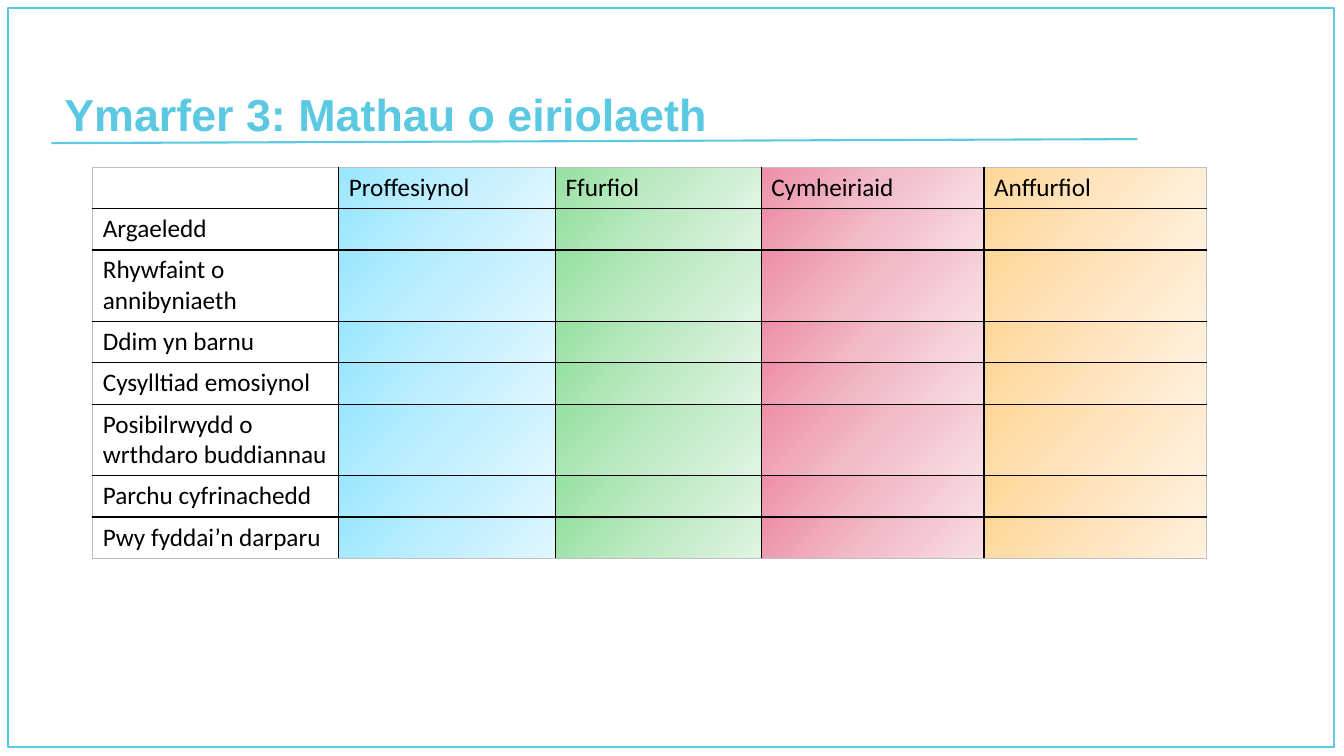
from lxml import etree
from pptx import Presentation
from pptx.dml.color import RGBColor
from pptx.enum.shapes import MSO_CONNECTOR, MSO_SHAPE
from pptx.enum.text import MSO_ANCHOR
from pptx.oxml.ns import qn
from pptx.util import Inches, Pt

TITLE = "Ymarfer 3: Mathau o eiriolaeth"
# heading, column width, gradient stops
COLUMNS = [
    ("", 2.44, None),
    ("Proffesiynol", 2.15, ("9AE7FF", "C0EFFF", "E0F6FE")),
    ("Ffurfiol", 2.04, ("95E0A0", "BFEAC5", "E0F4E3")),
    ("Cymheiriaid", 2.21, ("ED8EA7", "F2BBC8", "F8DEE4")),
    ("Anffurfiol", 2.21, ("FFD696", "FFE4BE", "FFF1DF")),
]
# label, row height
ROWS = [
    ("Argaeledd", 0.41),
    ("Rhywfaint o annibyniaeth", 0.71),
    ("Ddim yn barnu", 0.41),
    ("Cysylltiad emosiynol", 0.41),
    ("Posibilrwydd o wrthdaro buddiannau", 0.71),
    ("Parchu cyfrinachedd", 0.41),
    ("Pwy fyddai’n darparu", 0.41),
]
HEADER_HEIGHT = 0.41
ACCENT = RGBColor(0x5C, 0xC9, 0xE3)
BLACK = RGBColor(0, 0, 0)
OUTER = RGBColor(0xBF, 0xBF, 0xBF)


def add_color(parent, color):
    fill = etree.SubElement(parent, qn("a:solidFill"))
    etree.SubElement(fill, qn("a:srgbClr"), val=str(color))


def set_border(cell, side, color):
    ln = etree.SubElement(cell._tc.get_or_add_tcPr(), qn(f"a:ln{side}"), w=str(Pt(1)))
    add_color(ln, color)


def set_gradient(cell, stops):
    """Fill the cell with evenly spaced stops, running at 45 degrees."""
    grad = etree.SubElement(cell._tc.get_or_add_tcPr(), qn("a:gradFill"))
    gs_list = etree.SubElement(grad, qn("a:gsLst"))
    for i, color in enumerate(stops):
        gs = etree.SubElement(gs_list, qn("a:gs"), pos=str(i * 50000))
        etree.SubElement(gs, qn("a:srgbClr"), val=color)
    etree.SubElement(grad, qn("a:lin"), ang="2700000", scaled="0")


def format_cell(cell, text, stops, edges):
    for side, is_outer in edges.items():
        set_border(cell, side, OUTER if is_outer else BLACK)
    if stops:
        set_gradient(cell, stops)
    else:
        cell.fill.background()
    p = cell.text_frame.paragraphs[0]
    p.text = text
    for font in [p.font] + [r.font for r in p.runs]:
        font.name, font.size, font.bold = "Calibri", Pt(18), False
        font.color.rgb = BLACK


def add_frame(s):
    line = s.shapes.add_connector(MSO_CONNECTOR.STRAIGHT, Inches(0.51), Inches(1.42),
                                  Inches(11.28), Inches(1.38))
    line.line.color.rgb, line.line.width = ACCENT, Pt(1.5)
    etree.SubElement(line._element.spPr, qn("a:effectLst"))
    frame = s.shapes.add_shape(MSO_SHAPE.RECTANGLE, Inches(0.08), Inches(0.08),
                               Inches(13.15), Inches(7.33))
    frame.shadow.inherit = False
    frame.fill.background()
    frame.line.color.rgb, frame.line.width = ACCENT, Pt(1)


def add_title(s):
    tf = s.shapes.add_textbox(Inches(0.54), 0, Inches(11.5), Inches(1.45)).text_frame
    tf.word_wrap = True
    tf.vertical_anchor = MSO_ANCHOR.BOTTOM
    p = tf.paragraphs[0]
    p.text = TITLE
    p.line_spacing = 0.9
    font = p.runs[0].font
    font.name, font.size, font.bold = "Arial", Pt(32), True
    font.color.rgb = ACCENT


def add_advocacy_table(s):
    heights = [HEADER_HEIGHT] + [height for _, height in ROWS]
    widths = [width for _, width, _ in COLUMNS]
    table = s.shapes.add_table(len(heights), len(widths), Inches(0.92), Inches(1.66),
                               Inches(sum(widths)), Inches(sum(heights))).table
    table.first_row = table.horz_banding = False
    for column, width in zip(table.columns, widths):
        column.width = Inches(width)
    for row, height in zip(table.rows, heights):
        row.height = Inches(height)
    last_row, last_col = len(heights) - 1, len(widths) - 1
    for i in range(len(heights)):
        for j, (heading, _, stops) in enumerate(COLUMNS):
            text = heading if i == 0 else ROWS[i - 1][0] if j == 0 else ""
            edges = {"L": j == 0, "R": j == last_col, "T": i == 0, "B": i == last_row}
            format_cell(table.cell(i, j), text, stops, edges)


def main():
    prs = Presentation()
    prs.slide_width, prs.slide_height = Inches(13.33), Inches(7.5)
    s = prs.slides.add_slide(prs.slide_layouts[6])
    add_frame(s)
    add_title(s)
    add_advocacy_table(s)
    prs.save("out.pptx")


if __name__ == "__main__":
    main()
